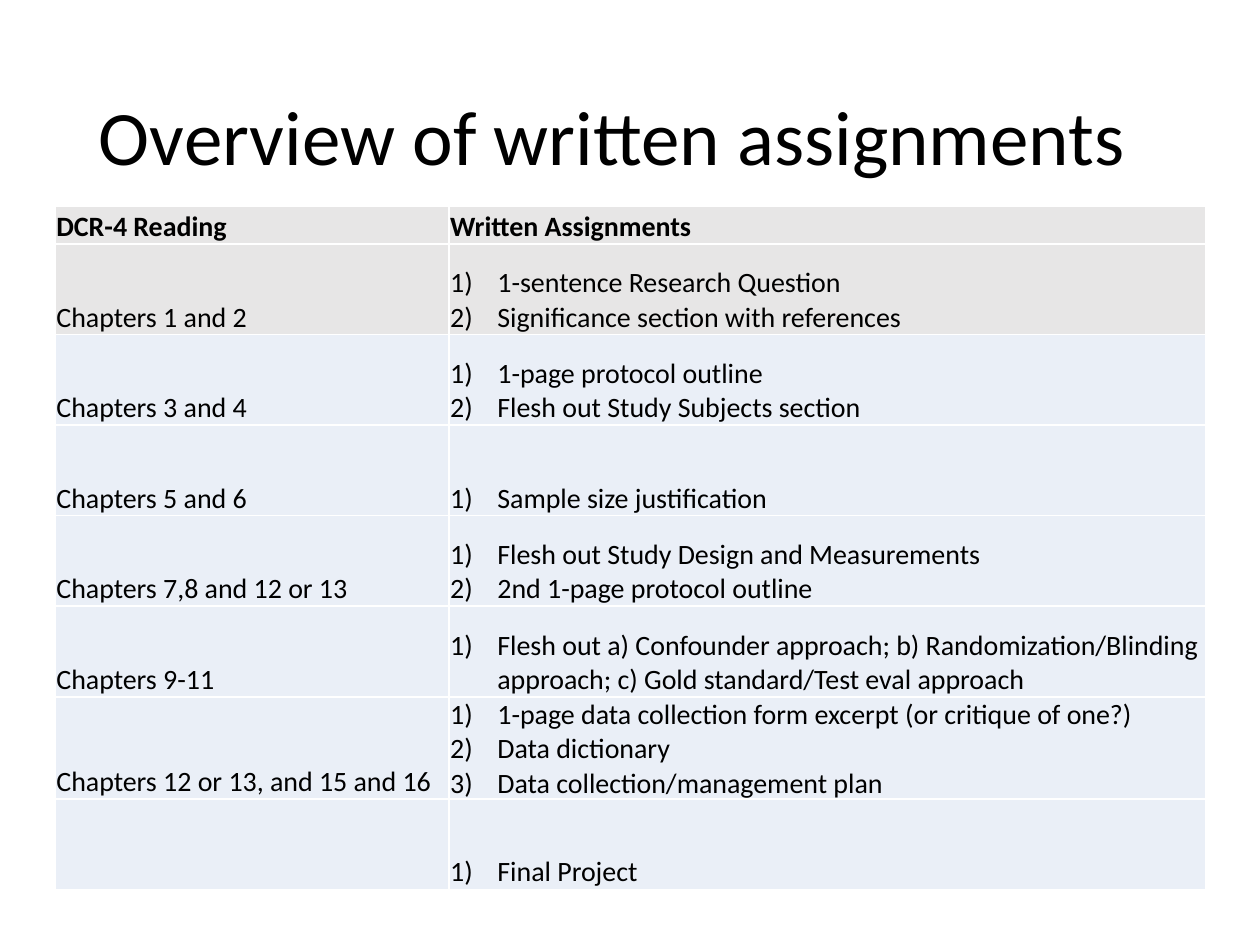
from dataclasses import dataclass

from lxml import etree
from pptx import Presentation
from pptx.dml.color import RGBColor
from pptx.enum.text import MSO_ANCHOR
from pptx.oxml.ns import qn
from pptx.util import Pt

MIDDLE, BOTTOM = MSO_ANCHOR.MIDDLE, MSO_ANCHOR.BOTTOM

# Content: reading, then numbered assignments
TITLE = "Overview of written assignments"
HEADER = ("DCR-4 Reading", "Written Assignments")
ROWS = [
    ("Chapters 1 and 2", ["1-sentence Research Question",
                          "Significance section with references"]),
    ("Chapters 3 and 4", ["1-page protocol outline",
                          "Flesh out Study Subjects section"]),
    ("Chapters 5 and 6", ["Sample size justification"]),
    ("Chapters 7,8 and 12 or 13", ["Flesh out Study Design and Measurements",
                                   "2nd 1-page protocol outline"]),
    ("Chapters 9-11", ["Flesh out a) Confounder approach; b) Randomization/Blinding "
                       "approach; c) Gold standard/Test eval approach"]),
    ("Chapters 12 or 13, and 15 and 16",
     ["1-page data collection form excerpt (or critique of one?)",
      "Data dictionary", "Data collection/management plan"]),
    ("", ["Final Project"]),
]


@dataclass(frozen=True)
class Theme:
    font: str = "Calibri"
    title_size: int = 44
    body_size: int = 16
    text: str = "000000"
    grey: str = "E7E6E6"
    blue: str = "EAEFF7"
    border: str = "FFFFFF"


THEME = Theme()

# Layout in px, 96 to the inch
SLIDE_W, SLIDE_H = 960, 720
TITLE_BOX = (66, 38, 828, 139)
TABLE_LEFT, TABLE_TOP = 42, 157
COL_WIDTHS = (300, 577)
ROW_HEIGHTS = [29] + [69] * len(ROWS)
CELL_MARGIN, INDENT = 1, 36


def px(n):
    return n * 9525


def style(p, size, bold=False):
    for r in p.runs:
        r.font.name = THEME.font
        r.font.size = Pt(size)
        r.font.bold = bold
        r.font.color.rgb = RGBColor.from_string(THEME.text)


def number(p):
    pPr = p._p.get_or_add_pPr()
    pPr.set("marL", str(px(INDENT)))
    pPr.set("indent", str(-px(INDENT)))
    etree.SubElement(pPr, qn("a:buFont"), typeface="+mj-lt")
    etree.SubElement(pPr, qn("a:buAutoNum"), type="arabicParenR")


def add_borders(cell):
    tcPr = cell._tc.get_or_add_tcPr()
    for i, side in enumerate(("lnL", "lnR", "lnT", "lnB")):
        ln = etree.Element(qn(f"a:{side}"), w=str(Pt(1)))
        fill = etree.SubElement(ln, qn("a:solidFill"))
        etree.SubElement(fill, qn("a:srgbClr"), val=THEME.border)
        tcPr.insert(i, ln)


def fill_cell(cell, lines, color, bold=False, numbered=False):
    cell.margin_left = cell.margin_right = cell.margin_top = px(CELL_MARGIN)
    cell.margin_bottom = 0
    cell.vertical_anchor = BOTTOM
    cell.fill.solid()
    cell.fill.fore_color.rgb = RGBColor.from_string(color)
    add_borders(cell)
    cell.text_frame.text = "\n".join(lines)
    for p in cell.text_frame.paragraphs:
        style(p, THEME.body_size, bold)
        if numbered:
            number(p)


def add_title(slide):
    tf = slide.shapes.add_textbox(*map(px, TITLE_BOX)).text_frame
    tf.word_wrap = True
    tf.vertical_anchor = MIDDLE
    tf.text = TITLE
    tf.paragraphs[0].line_spacing = 0.9
    style(tf.paragraphs[0], THEME.title_size)


def add_assignments(slide):
    table = slide.shapes.add_table(
        len(ROW_HEIGHTS), len(COL_WIDTHS), px(TABLE_LEFT), px(TABLE_TOP),
        px(sum(COL_WIDTHS)), px(sum(ROW_HEIGHTS))).table
    for col, width in zip(table.columns, COL_WIDTHS):
        col.width = px(width)
    for row, height in zip(table.rows, ROW_HEIGHTS):
        row.height = px(height)

    for c, label in enumerate(HEADER):
        fill_cell(table.cell(0, c), [label], THEME.grey, bold=True)
    for i, (reading, tasks) in enumerate(ROWS, start=1):
        color = THEME.grey if i == 1 else THEME.blue
        fill_cell(table.cell(i, 0), [reading], color)
        fill_cell(table.cell(i, 1), tasks, color, numbered=True)


def main():
    prs = Presentation()
    prs.slide_width, prs.slide_height = px(SLIDE_W), px(SLIDE_H)
    slide = prs.slides.add_slide(prs.slide_layouts[6])
    add_title(slide)
    add_assignments(slide)
    prs.save("out.pptx")


if __name__ == "__main__":
    main()
